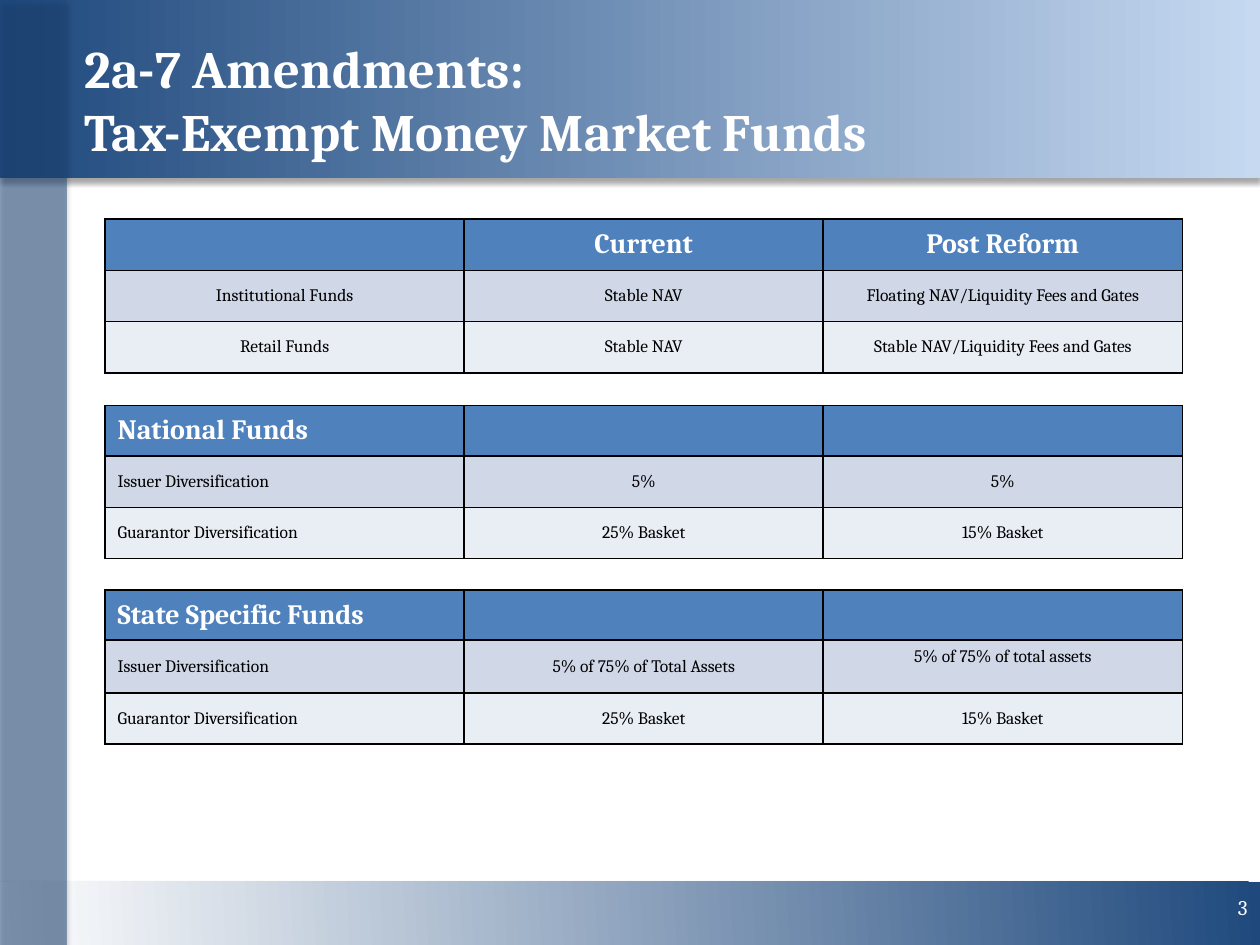
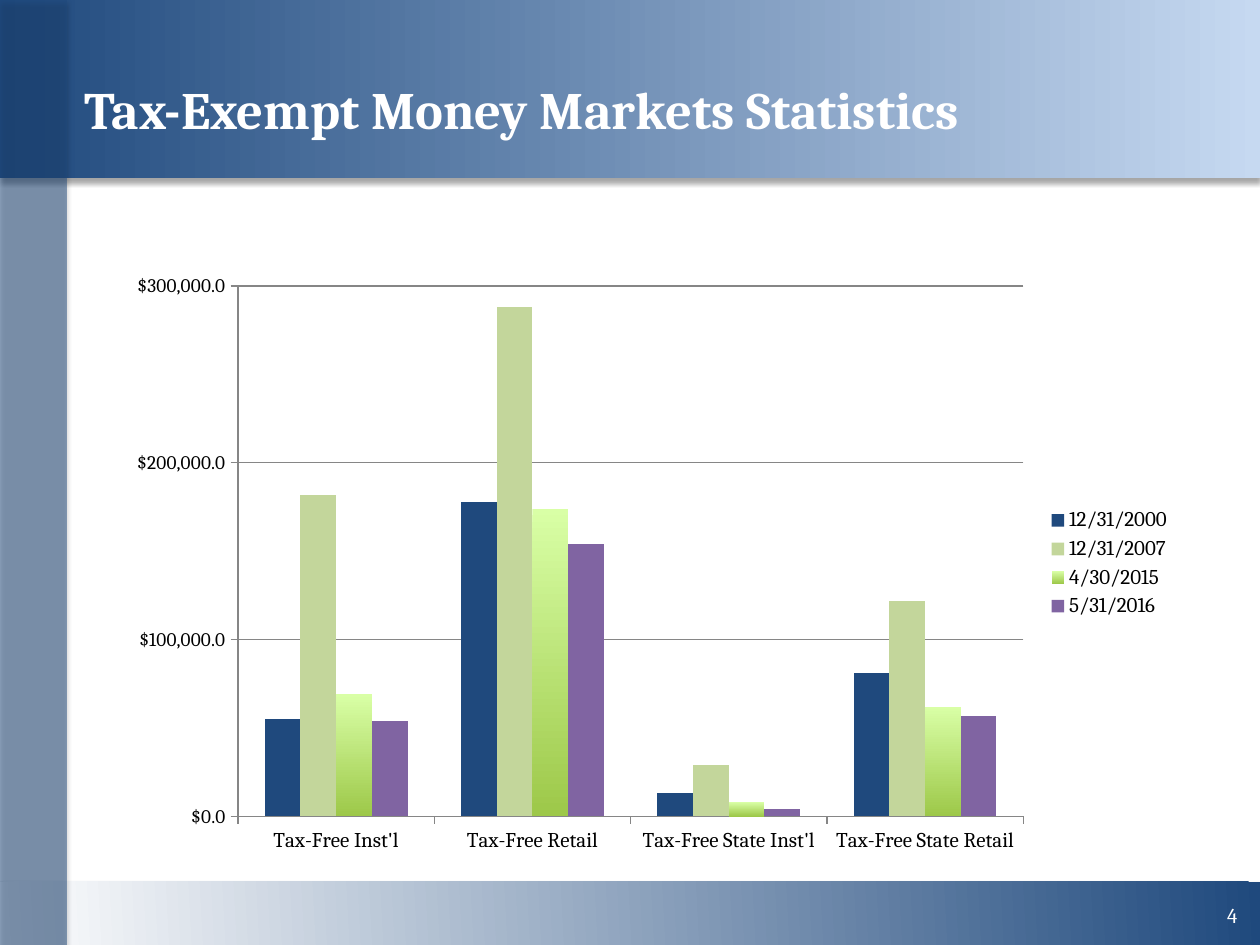
import pptx
import pptx.chart.data
import pptx.dml.color
import pptx.enum.chart
import pptx.enum.shapes
import pptx.enum.text
import pptx.oxml
import pptx.oxml.ns
import pptx.util

Pt = pptx.util.Pt
ALIGN = pptx.enum.text.PP_ALIGN
ANCHOR = pptx.enum.text.MSO_ANCHOR
NS = pptx.oxml.ns.nsdecls("a")

WIDTH, HEIGHT = 720, 540
FONT = "Cambria"
COLORS = {
    "navy": "1F497D", "sky": "C6D9F1", "white": "FFFFFF", "black": "000000",
    "header": "4F81BD", "band_dark": "D0D8E8", "band_light": "E9EDF4",
    "grid": "868686", "sage": "C3D69B", "purple": "8064A2",
    "lime_top": "D9FFA6", "lime_bottom": "9DC849",
}


def rgb(name):
    return pptx.dml.color.RGBColor.from_string(COLORS[name])


def set_font(font, size, color, bold=False):
    font.name, font.size, font.bold = FONT, Pt(size), bold
    font.color.rgb = rgb(color)


def set_gradient(fill, start, end, clockwise):
    fill.gradient()
    fill.gradient_angle = (360 - clockwise) % 360
    for stop, name in zip(fill.gradient_stops, (start, end)):
        stop.color.rgb = rgb(name)


def add_shadow(sp):
    sp._element.spPr.append(pptx.oxml.parse_xml(
        f'<a:effectLst {NS}><a:outerShdw blurRad="{Pt(3.1)}" dist="{Pt(1.8)}" '
        f'dir="5400000" rotWithShape="0"><a:srgbClr val="{COLORS["black"]}">'
        '<a:alpha val="35000"/></a:srgbClr></a:outerShdw></a:effectLst>'))


def add_borders(cell):
    tcPr = cell._tc.get_or_add_tcPr()
    for side in "LRTB":
        tcPr.append(pptx.oxml.parse_xml(
            f'<a:ln{side} {NS} w="{Pt(1)}"><a:solidFill>'
            f'<a:srgbClr val="{COLORS["black"]}"/></a:solidFill></a:ln{side}>'))


class Deck:
    def __init__(self):
        self.prs = pptx.Presentation()
        self.prs.slide_width, self.prs.slide_height = Pt(WIDTH), Pt(HEIGHT)
        self.slide = None

    def add_slide(self):
        """Start a slide with its footer, title band and side bar."""
        self.slide = self.prs.slides.add_slide(self.prs.slide_layouts[6])
        footer = self.rect(0, 504, WIDTH, 36)
        set_gradient(footer.fill, "navy", "white", 177)
        add_shadow(footer)
        band = self.rect(0, 0, WIDTH, 102)
        set_gradient(band.fill, "navy", "sky", 0)
        side = self.rect(0, 0, 38.2, HEIGHT)
        side.fill.solid()
        side.fill.fore_color.rgb = rgb("navy")
        color = side.fill._xPr.find(".//" + pptx.oxml.ns.qn("a:srgbClr"))
        color.append(pptx.oxml.parse_xml(f'<a:alpha {NS} val="50000"/>'))
        add_shadow(side)

    def rect(self, x, y, w, h):
        sp = self.slide.shapes.add_shape(
            pptx.enum.shapes.MSO_SHAPE.RECTANGLE, Pt(x), Pt(y), Pt(w), Pt(h))
        sp.line.fill.background()
        return sp

    def text(self, lines, box, margins, size, anchor, align, bold=False):
        tf = self.slide.shapes.add_textbox(*map(Pt, box)).text_frame
        tf.word_wrap = True
        tf.vertical_anchor = anchor
        tf.margin_left = tf.margin_right = Pt(margins[0])
        tf.margin_top = tf.margin_bottom = Pt(margins[1])
        for i, line in enumerate(lines):
            p = tf.add_paragraph() if i else tf.paragraphs[0]
            p.text, p.alignment = line, align
            set_font(p.font, size, "white", bold)

    def title(self, lines, top):
        self.text(lines, (42, top, 660, 47.5), (6.5, 3.2), 30,
                  ANCHOR.BOTTOM, ALIGN.LEFT, True)

    def page_number(self, number, x, y):
        self.text([str(number)], (x, y, WIDTH, 29), (7.2, 3.6), 12,
                  ANCHOR.MIDDLE, ALIGN.RIGHT)

    def table(self, top, heights, rows, first_align):
        table = self.slide.shapes.add_table(
            len(rows), 3, Pt(60), Pt(top), Pt(615.6), Pt(sum(heights))).table
        for col in table.columns:
            col.width = Pt(205.2)
        fills = ("header", "band_dark", "band_light")
        for i, values in enumerate(rows):
            table.rows[i].height = Pt(heights[i])
            for j, value in enumerate(values):
                cell = table.cell(i, j)
                add_borders(cell)
                cell.fill.solid()
                cell.fill.fore_color.rgb = rgb(fills[i])
                cell.vertical_anchor = ANCHOR.MIDDLE
                p = cell.text_frame.paragraphs[0]
                p.text = value
                p.alignment = ALIGN.CENTER if j else first_align
                if i:
                    set_font(p.font, 10, "black")
                else:
                    set_font(p.font, 16, "white", True)
        return table

    def column_chart(self, box, categories, series):
        """Draw clustered columns; series maps a name to (values, colours)."""
        data = pptx.chart.data.CategoryChartData()
        data.categories = categories
        for name, (values, _) in series.items():
            data.add_series(name, values)
        chart = self.slide.shapes.add_chart(
            pptx.enum.chart.XL_CHART_TYPE.COLUMN_CLUSTERED,
            *map(Pt, box), data).chart
        set_font(chart.font, 12, "black")
        chart.has_title = False
        chart.has_legend = True
        chart.legend.position = pptx.enum.chart.XL_LEGEND_POSITION.RIGHT
        chart.legend.include_in_layout = False
        set_font(chart.legend.font, 12, "black")

        plot = chart.plots[0]
        plot.gap_width, plot.overlap = 150, 0
        plot.vary_by_categories = False
        for ser, (_, colors) in zip(plot.series, series.values()):
            fill = ser.format.fill
            if len(colors) == 2:
                set_gradient(fill, *colors, 90)
            else:
                fill.solid()
                fill.fore_color.rgb = rgb(colors[0])

        axis = chart.value_axis
        axis.minimum_scale, axis.maximum_scale = 0, 300000
        axis.major_unit = 100000
        axis.tick_labels.number_format = '"$"#,##0.0'
        axis.tick_labels.number_format_is_linked = False
        axis.has_major_gridlines = True
        lines = [axis.major_gridlines.format.line]
        for ax, size in ((axis, 11), (chart.category_axis, 12)):
            ax.major_tick_mark = pptx.enum.chart.XL_TICK_MARK.OUTSIDE
            set_font(ax.tick_labels.font, size, "black")
            lines.append(ax.format.line)
        for line in lines:
            line.color.rgb = rgb("grid")
            line.width = Pt(0.75)


def amendments_slide(deck):
    deck.add_slide()
    deck.page_number(3, 0, 504)
    deck.title(["2a-7 Amendments:", "Tax-Exempt Money Market Funds"], 48.2)
    deck.table(125.2, (29.3, 29.3, 29.3), [
        ("", "Current", "Post Reform"),
        ("Institutional Funds", "Stable NAV",
         "Floating NAV/Liquidity Fees and Gates"),
        ("Retail Funds", "Stable NAV", "Stable NAV/Liquidity Fees and Gates"),
    ], ALIGN.CENTER)
    guarantor = ("Guarantor Diversification", "25% Basket", "15% Basket")
    deck.table(231.8, (28.8, 29.3, 29.3), [
        ("National Funds", "", ""),
        ("Issuer Diversification", "5%", "5%"),
        guarantor,
    ], ALIGN.LEFT)
    state = deck.table(337, (28.8, 30.2, 29.3), [
        ("State Specific Funds", "", ""),
        ("Issuer Diversification", "5% of 75% of Total Assets",
         "5% of 75% of total assets"),
        guarantor,
    ], ALIGN.LEFT)
    state.cell(1, 2).vertical_anchor = ANCHOR.TOP


def statistics_slide(deck):
    deck.add_slide()
    deck.page_number(4, -5.8, 508.3)
    deck.column_chart(
        (66.2, 149.8, 610.6, 344.2),
        ["Tax-Free Inst'l", "Tax-Free Retail",
         "Tax-Free State Inst'l", "Tax-Free State Retail"],
        {
            "12/31/2000": ((55000, 178000, 13000, 81000), ["navy"]),
            "12/31/2007": ((182000, 288000, 29000, 122000), ["sage"]),
            "4/30/2015": ((69000, 174000, 8000, 62000),
                          ["lime_top", "lime_bottom"]),
            "5/31/2016": ((54000, 154000, 4000, 57000), ["purple"]),
        })
    deck.title(["Tax-Exempt Money Markets Statistics"], 36)


def main():
    deck = Deck()
    amendments_slide(deck)
    statistics_slide(deck)
    deck.prs.save("out.pptx")


if __name__ == "__main__":
    main()
